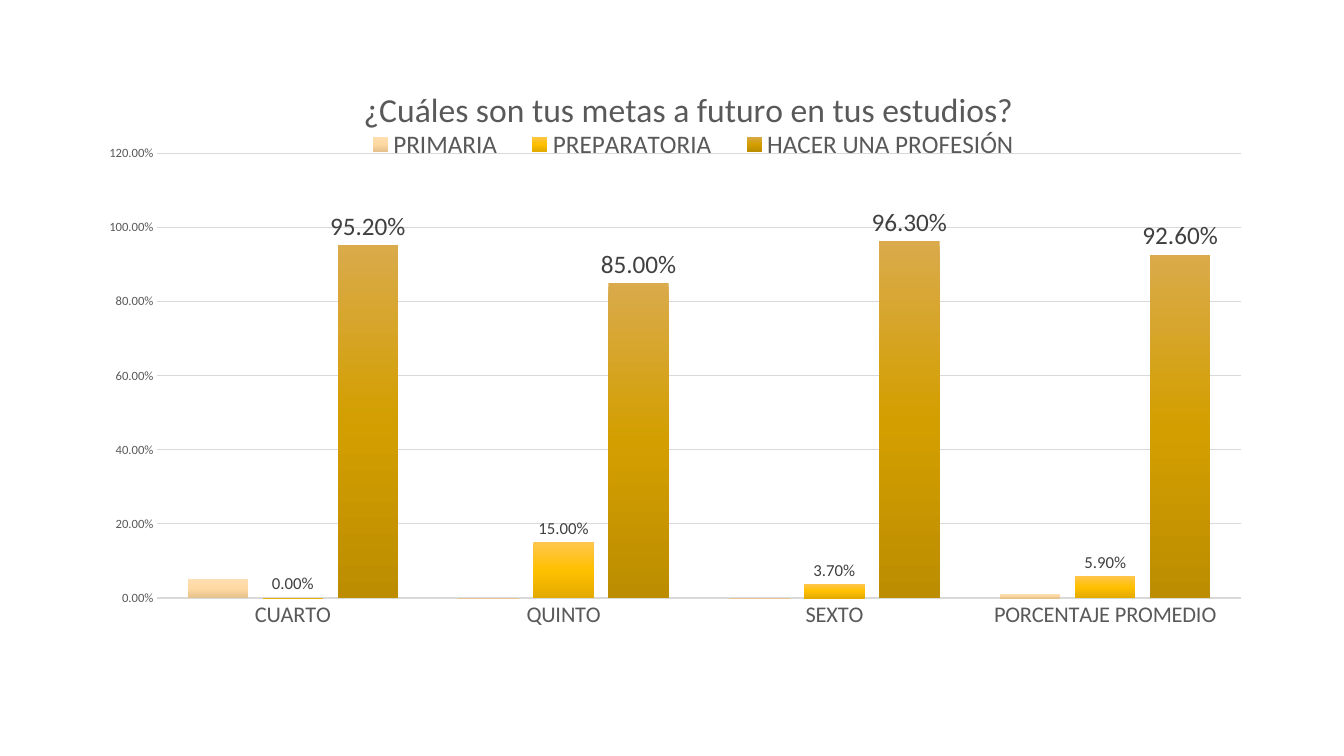
from pptx import Presentation
from pptx.chart.data import CategoryChartData as Data
from pptx.dml.color import RGBColor
from pptx.enum.chart import XL_CHART_TYPE as Kind, XL_LABEL_POSITION as Spot
from pptx.enum.chart import XL_LEGEND_POSITION as Side, XL_TICK_MARK as Tick
from pptx.oxml import parse_xml
from pptx.oxml.ns import nsdecls
from pptx.util import Pt

TITLE = "¿Cuáles son tus metas a futuro en tus estudios?"
GRADES = ["CUARTO", "QUINTO", "SEXTO", "PORCENTAJE PROMEDIO"]
GOALS = [
    ("PRIMARIA", (0.05, 0, 0, 0.01), ("FFDEB1", "FFD9A2", "E5C18D"), None),
    ("PREPARATORIA", (0, 0.15, 0.037, 0.059), ("FFC64B", "FFC000", "E3AB00"), 12),
    ("HACER UNA PROFESIÓN", (0.952, 0.85, 0.963, 0.926), ("DAAA4B", "D39F00", "BC8D00"), 18),
]
GREY, PALE, DARK = "595959", "D9D9D9", "404040"
FORMAT = "0.00%"


def color(text):
    return RGBColor.from_string(text)


def style(font, size, tone):
    font.name = "Calibri"
    font.size = Pt(size)
    font.bold = False
    font.color.rgb = color(tone)


def stroke(line, width):
    line.color.rgb = color(PALE)
    line.width = Pt(width)


def shade(series, tones):
    stops = "".join(
        f'<a:gs pos="{pos}"><a:srgbClr val="{tone}"/></a:gs>'
        for pos, tone in zip((0, 50000, 100000), tones)
    )
    series.format.fill.background()
    props = series.format.fill._xPr
    blank = props.find("{*}noFill")
    props.replace(blank, parse_xml(
        f'<a:gradFill {nsdecls("a")} rotWithShape="1"><a:gsLst>{stops}</a:gsLst>'
        '<a:lin ang="5400000" scaled="0"/></a:gradFill>'
    ))


def place(part, inner=False, **spots):
    for old in part.findall("{*}layout"):
        part.remove(old)
    target = '<c:layoutTarget val="inner"/>' if inner else ""
    modes = '<c:xMode val="edge"/><c:yMode val="edge"/>'
    sizes = "".join(f'<c:{key} val="{val}"/>' for key, val in spots.items())
    layout = parse_xml(
        f'<c:layout {nsdecls("c")}><c:manualLayout>{target}{modes}{sizes}'
        '</c:manualLayout></c:layout>'
    )
    if inner:
        part.insert(0, layout)
    else:
        part.find("{*}overlay").addprevious(layout)


def set_axes(chart):
    cat, val = chart.category_axis, chart.value_axis
    for axis, size in ((cat, 16), (val, 9)):
        style(axis.tick_labels.font, size, GREY)
        axis.major_tick_mark = axis.minor_tick_mark = Tick.NONE
    stroke(cat.format.line, 1)
    val.format.line.fill.background()
    val.minimum_scale, val.maximum_scale, val.major_unit = 0, 1.2, 0.2
    val.has_major_gridlines = True
    stroke(val.major_gridlines.format.line, 0.75)
    val.tick_labels.number_format = FORMAT
    val.tick_labels.number_format_is_linked = False


def set_bars(plot):
    plot.gap_width, plot.overlap = 100, -24
    plot.vary_by_categories = False
    for series, (_, _, tones, size) in zip(plot.series, GOALS):
        shade(series, tones)
        if size:
            labels = series.data_labels
            labels.show_value = True
            labels.number_format = FORMAT
            labels.number_format_is_linked = False
            labels.position = Spot.OUTSIDE_END
            style(labels.font, size, DARK)


def set_heads(chart):
    chart.has_title = True
    frame = chart.chart_title.text_frame
    frame.text = TITLE
    style(frame.paragraphs[0].runs[0].font, 24, GREY)
    chart.has_legend = True
    legend = chart.legend
    legend.position = Side.BOTTOM
    legend.include_in_layout = False
    style(legend.font, 18, GREY)
    place(chart.chart_title._element, x=0.23, y=0.04)
    place(legend._element, x=0.22, y=0.11, w=0.59, h=0.06)


def add_goals(slide, left, top, width, height):
    data = Data(number_format=FORMAT)
    data.categories = GRADES
    for name, vals, _, _ in GOALS:
        data.add_series(name, vals)
    chart = slide.shapes.add_chart(
        Kind.COLUMN_CLUSTERED, Pt(left), Pt(top), Pt(width), Pt(height), data
    ).chart
    style(chart.font, 10, "000000")
    set_axes(chart)
    set_bars(chart.plots[0])
    set_heads(chart)
    area = chart._chartSpace.find(".//{*}plotArea")
    place(area, inner=True, x=0.06, y=0.155, w=0.92, h=0.7)


def main():
    deck = Presentation()
    deck.slide_width, deck.slide_height = Pt(960), Pt(540)
    slide = deck.slides.add_slide(deck.slide_layouts[6])
    add_goals(slide, 62, 39.5, 841, 453.5)
    deck.save("out.pptx")


if __name__ == "__main__":
    main()
